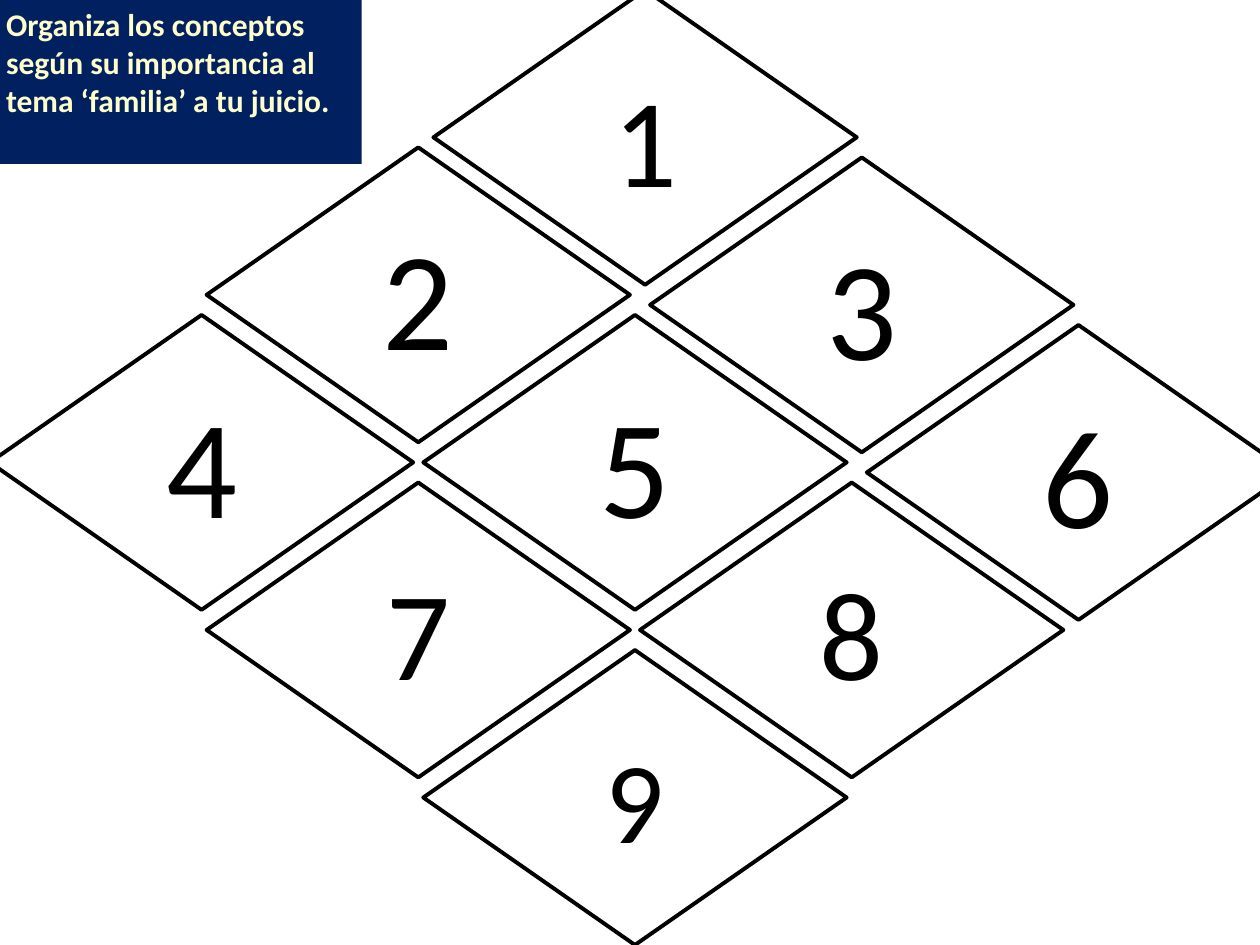
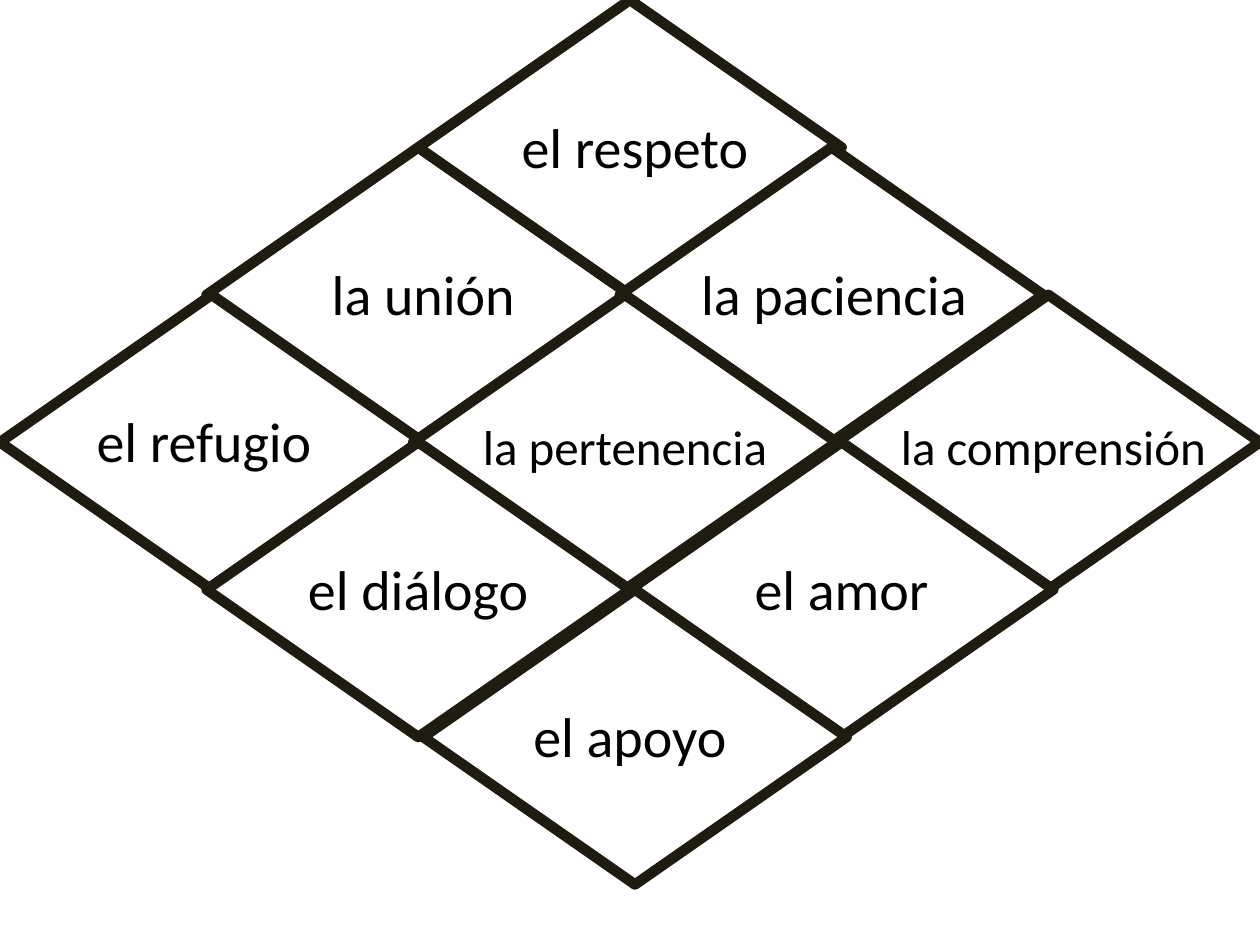
from pptx import Presentation
from pptx.dml.color import RGBColor
from pptx.enum.shapes import MSO_SHAPE
from pptx.enum.text import MSO_ANCHOR, MSO_AUTO_SIZE, PP_ALIGN
from pptx.util import Inches, Pt

WHITE = RGBColor(0xFF, 0xFF, 0xFF)
BLACK = RGBColor(0x00, 0x00, 0x00)
DARK_OLIVE = RGBColor(0x1E, 0x1C, 0x11)
NAVY = RGBColor(0x00, 0x20, 0x60)
CREAM = RGBColor(0xFF, 0xFF, 0xCC)
FONT = "Calibri"
DIAMOND_WIDTH, DIAMOND_HEIGHT = 3.36, 2.34

deck = Presentation()
deck.slide_width, deck.slide_height = Inches(10), Inches(7.5)
blank = deck.slide_layouts[6]


def add_diamond(slide, left, top, outline, weight):
    diamond = slide.shapes.add_shape(
        MSO_SHAPE.FLOWCHART_DECISION, Inches(left), Inches(top),
        Inches(DIAMOND_WIDTH), Inches(DIAMOND_HEIGHT))
    diamond.shadow.inherit = False
    diamond.fill.solid()
    diamond.fill.fore_color.rgb = WHITE
    diamond.line.color.rgb = outline
    diamond.line.width = Pt(weight)
    return diamond


def write(shape, text, size, color, align, bold=False):
    shape.text_frame.word_wrap = True
    paragraph = shape.text_frame.paragraphs[0]
    paragraph.text = text
    paragraph.alignment = align
    paragraph.font.name = FONT
    paragraph.font.size = Pt(size)
    paragraph.font.bold = bold
    paragraph.font.color.rgb = color


# column, row, nudge right and down, digit, size
ranking = [
    (1, 1, 0, "2", 80),
    (2, 0, 0.08, "1", 72),
    (3, 1, 0.08, "3", 80),
    (4, 2, 0.08, "6", 80),
    (0, 2, 0, "4", 80),
    (2, 2, 0, "5", 80),
    (3, 3, 0, "8", 72),
    (1, 3, 0, "7", 72),
    (2, 4, 0, "9", 66),
]
ranking_slide = deck.slides.add_slide(blank)
for column, row, nudge, digit, size in ranking:
    rank = add_diamond(ranking_slide, -0.08 + 1.72 * column + nudge,
                       -0.16 + 1.33 * row + nudge, BLACK, 2.25)
    rank.text_frame.vertical_anchor = MSO_ANCHOR.MIDDLE
    write(rank, digit, size, BLACK, PP_ALIGN.CENTER)

instruction = ranking_slide.shapes.add_shape(
    MSO_SHAPE.RECTANGLE, Inches(-0.05), Inches(-0.01), Inches(2.92), Inches(1.31))
instruction.shadow.inherit = False
instruction.fill.solid()
instruction.fill.fore_color.rgb = NAVY
instruction.line.fill.background()
instruction.text_frame.vertical_anchor = MSO_ANCHOR.TOP
write(instruction,
      "Organiza los conceptos según su importancia al tema ‘familia’ a tu juicio.",
      18, CREAM, PP_ALIGN.LEFT, bold=True)

concepts = [
    (1, 1, 0, "la unión", 32, 0.04),
    (2, 0, 0.04, "el respeto", 32, 0.04),
    (3, 1, 0, "la paciencia", 32, 0.02),
    (4, 2, 0.08, "la comprensión", 28, 0.04),
    (0, 2, 0, "el refugio", 32, -0.06),
    (2, 2, 0, "la pertenencia", 28, 0),
    (3, 3, 0.08, "el amor", 32, 0),
    (1, 3, 0, "el diálogo", 32, 0),
    (2, 4, 0.08, "el apoyo", 32, -0.04),
]
concept_slide = deck.slides.add_slide(blank)
for column, row, nudge, *_ in concepts:
    add_diamond(concept_slide, 1.64 * column + nudge, 1.17 * row, DARK_OLIVE, 6)

LABEL_WIDTH = 2.93
for column, row, nudge, concept, size, shift in concepts:
    center = 1.64 * column + nudge + DIAMOND_WIDTH / 2 + shift
    height = 0.64 if size == 32 else 0.57
    top = 1.17 * row + 0.84 if size == 32 else 1.17 * row + 0.92
    label = concept_slide.shapes.add_textbox(
        Inches(center - LABEL_WIDTH / 2), Inches(top),
        Inches(LABEL_WIDTH), Inches(height))
    label.text_frame.auto_size = MSO_AUTO_SIZE.SHAPE_TO_FIT_TEXT
    write(label, concept, size, BLACK, PP_ALIGN.CENTER)

deck.save("out.pptx")
